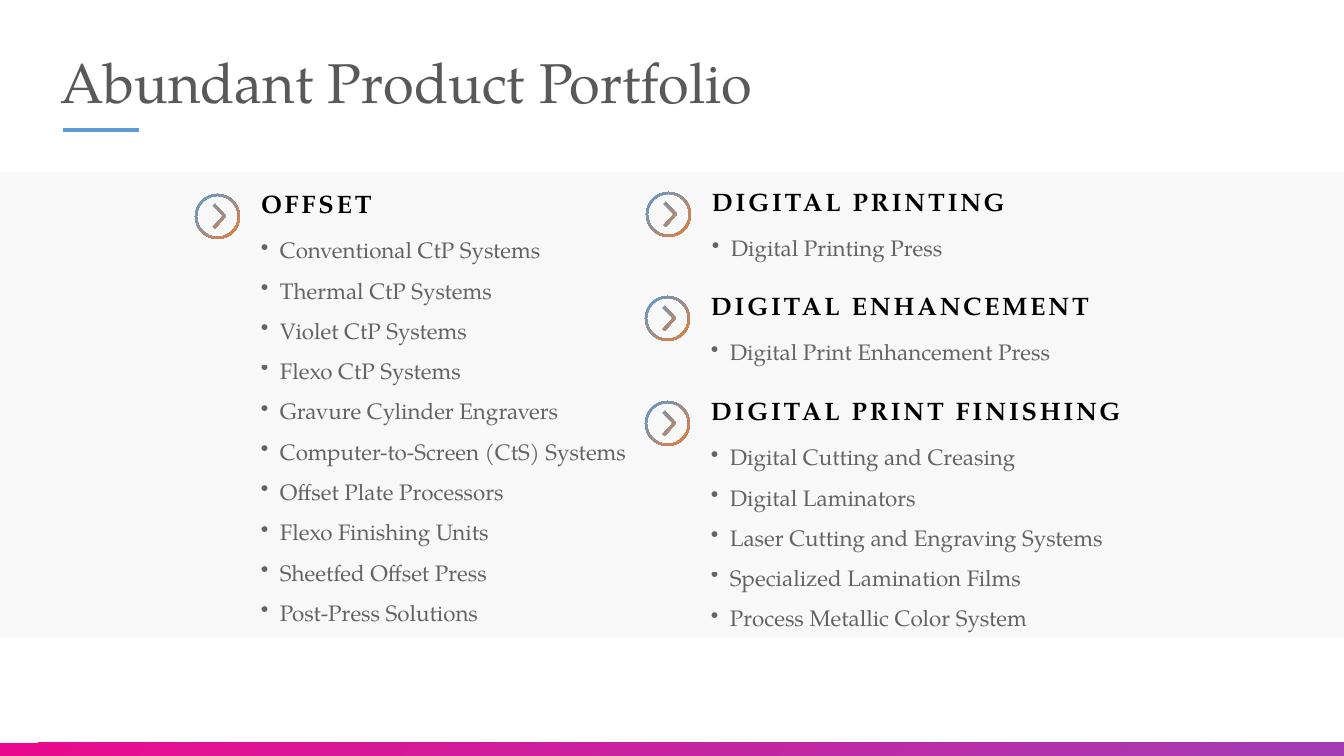
from dataclasses import dataclass

from lxml import etree
from pptx import Presentation
from pptx import util as u
from pptx.dml.color import RGBColor
from pptx.enum import dml, shapes, text
from pptx.oxml.ns import qn

EMU_PER_PX = 12192000 / 1344
FONT = "TeX Gyre Pagella"
PINK = RGBColor(0xEB, 0x0A, 0x8D)
PURPLE = RGBColor(0xA3, 0x3C, 0xB4)
BLUE = RGBColor(0x5B, 0x9B, 0xD5)
ORANGE = RGBColor(0xED, 0x7D, 0x31)
PANEL = RGBColor(0xF8, 0xF8, 0xF8)
WHITE = RGBColor(0xFF, 0xFF, 0xFF)
BLACK = RGBColor(0, 0, 0)
TITLE_GREY = RGBColor(0x59, 0x59, 0x59)

ICON_CENTRE = 22.5
RING_RADII = (20.5, 22.5)
ARC_HANDLE = 0.55
CHEVRON = ((20, 10), (18, 12), (28, 22), (18, 33), (20, 35), (31, 22))
TEXT_OFFSET = 66
LIST_OFFSET = 29
ITEM_PITCH = 40
BULLET_INDENT = 19

Point = tuple[float, float]


@dataclass(frozen=True)
class Style:
    """Format of a run and its line spacing."""
    size: int
    color: RGBColor
    line_spacing: float
    bold: bool = False
    tracking: int = 0
    opacity: int = 100
    bulleted: bool = False


@dataclass(frozen=True)
class Section:
    """One product group, placed by the corner of its icon."""
    left: int
    top: int
    heading_width: int
    list_width: int
    heading: str
    items: tuple[str, ...]


TITLE = Style(40, TITLE_GREY, 0.9)
HEADING = Style(18, BLACK, 0.8, bold=True, tracking=200)
ITEM = Style(16, BLACK, 1.5, opacity=60, bulleted=True)

SECTIONS = (
    Section(195, 194, 343, 377, "OFFSET", (
        "Conventional CtP Systems", "Thermal CtP Systems", "Violet CtP Systems",
        "Flexo CtP Systems", "Gravure Cylinder Engravers",
        "Computer-to-Screen (CtS) Systems", "Offset Plate Processors",
        "Flexo Finishing Units", "Sheetfed Offset Press", "Post-Press Solutions")),
    Section(645, 296, 398, 377, "DIGITAL ENHANCEMENT",
            ("Digital Print Enhancement Press",)),
    Section(645, 401, 424, 424, "DIGITAL PRINT FINISHING", (
        "Digital Cutting and Creasing", "Digital Laminators",
        "Laser Cutting and Engraving Systems", "Specialized Lamination Films",
        "Process Metallic Color System")),
    Section(646, 192, 398, 377, "DIGITAL PRINTING", ("Digital Printing Press",)),
)


def px(length: float) -> u.Emu:
    """Turn px into EMU."""
    return u.Emu(round(length * EMU_PER_PX))


def fill_gradient(shape, start: RGBColor, end: RGBColor) -> None:
    """Fill a shape with a diagonal gradient and no outline."""
    shape.shadow.inherit = False
    shape.line.fill.background()
    shape.fill.gradient()
    shape.fill.gradient_angle = 315
    for stop, color in zip(shape.fill.gradient_stops, (start, end)):
        stop.color.rgb = color


def add_band(slide, top: int, height: int):
    """Add a rectangle across the whole slide."""
    return slide.shapes.add_shape(
        shapes.MSO_SHAPE.RECTANGLE, 0, px(top), px(1344), px(height))


def add_bullet(paragraph) -> None:
    """Give a paragraph a hanging round bullet."""
    properties = paragraph._p.get_or_add_pPr()
    indent = px(BULLET_INDENT)
    for name, value in {"marL": indent, "indent": -indent}.items():
        properties.set(name, str(value))
    etree.SubElement(properties, qn("a:buChar")).set("char", "•")


def add_text(slide, left: int, top: int, width: int, height: int,
             lines: tuple[str, ...], style: Style,
             insets: tuple[int, int, int, int] = (0, 0, 0, 0)) -> None:
    """Add a text box with one paragraph for each line."""
    frame = slide.shapes.add_textbox(px(left), px(top), px(width), px(height)).text_frame
    sides = ("margin_left", "margin_top", "margin_right", "margin_bottom")
    frame_format = dict(zip(sides, map(px, insets)))
    frame_format |= {"word_wrap": True, "vertical_anchor": text.MSO_ANCHOR.TOP}
    for name, value in frame_format.items():
        setattr(frame, name, value)
    run_format = {"name": FONT, "size": u.Pt(style.size), "bold": style.bold}
    for index, line in enumerate(lines):
        paragraph = frame.add_paragraph() if index else frame.paragraphs[0]
        if style.bulleted:
            add_bullet(paragraph)
        paragraph.line_spacing = style.line_spacing
        run = paragraph.add_run()
        run.text = line
        for name, value in run_format.items():
            setattr(run.font, name, value)
        run.font.color.rgb = style.color
        properties = run._r.get_or_add_rPr()
        if style.tracking:
            properties.set("spc", str(style.tracking))
        if style.opacity < 100:
            color = properties.find(".//" + qn("a:srgbClr"))
            etree.SubElement(color, qn("a:alpha")).set("val", str(style.opacity * 1000))


def ring_outline(radius: float) -> list[Point]:
    """Return the start and the Bézier points of a circle in four arcs."""
    x, y = 0.0, -radius
    points = [(x, y)]
    for _ in range(4):
        end_x, end_y = -y, x
        points += [(x + ARC_HANDLE * end_x, y + ARC_HANDLE * end_y),
                   (end_x + ARC_HANDLE * x, end_y + ARC_HANDLE * y), (end_x, end_y)]
        x, y = end_x, end_y
    return [(ICON_CENTRE + x, ICON_CENTRE + y) for x, y in points]


def curve_rings(icon) -> None:
    """Turn every three line segments of the rings into one Bézier curve."""
    outline = icon._element.spPr.find(".//" + qn("a:path"))
    segments = outline.findall(qn("a:lnTo"))[:12 * len(RING_RADII)]
    for first, *others in zip(*[iter(segments)] * 3):
        first.tag = qn("a:cubicBezTo")
        for segment in others:
            first.append(segment[0])
            outline.remove(segment)


def add_icon(slide, left: int, top: int) -> None:
    """Add a ringed chevron as one outline."""
    outlines = [
        [(px(left + x), px(top + y)) for x, y in outline]
        for outline in (*map(ring_outline, RING_RADII), CHEVRON)]
    builder = slide.shapes.build_freeform(*outlines[0][0], scale=1.0)
    for index, (start, *rest) in enumerate(outlines):
        if index:
            builder.move_to(*start)
        builder.add_line_segments(rest, close=outlines[index][-1] != start)
    icon = builder.convert_to_shape()
    curve_rings(icon)
    fill_gradient(icon, BLUE, ORANGE)


def add_section(slide, section: Section) -> None:
    """Add the heading, list and icon of a product group."""
    text_left = section.left + TEXT_OFFSET
    add_text(slide, text_left, section.top, section.heading_width, 24,
             (section.heading,), HEADING)
    add_text(slide, text_left, section.top + LIST_OFFSET, section.list_width,
             ITEM_PITCH * len(section.items), section.items, ITEM, (0, 0, 10, 0))
    add_icon(slide, section.left, section.top)


def add_title_rule(slide) -> None:
    """Add the short line below the title."""
    rule = slide.shapes.add_connector(
        shapes.MSO_CONNECTOR.STRAIGHT, px(63), px(130), px(139), px(130))
    rule.line.color.rgb = BLUE
    rule.line.width = u.Pt(2.25)
    etree.SubElement(rule._element.spPr, qn("a:effectLst"))


def main() -> None:
    """Build and save the slide."""
    deck = Presentation()
    deck.slide_width, deck.slide_height = px(1344), px(756)
    slide = deck.slides.add_slide(deck.slide_layouts[6])
    fill_gradient(add_band(slide, 743, 13), PINK, PURPLE)
    panel = add_band(slide, 171, 467)
    panel.shadow.inherit = False
    panel.line.fill.background()
    panel.fill.patterned()
    panel.fill.pattern = dml.MSO_PATTERN.DARK_HORIZONTAL
    panel.fill.fore_color.rgb = PANEL
    panel.fill.back_color.rgb = WHITE
    add_text(slide, 51, 50, 749, 82, ("Abundant Product Portfolio",), TITLE, (10, 5, 10, 5))
    add_title_rule(slide)
    for section in SECTIONS:
        add_section(slide, section)
    deck.save("out.pptx")


if __name__ == "__main__":
    main()
